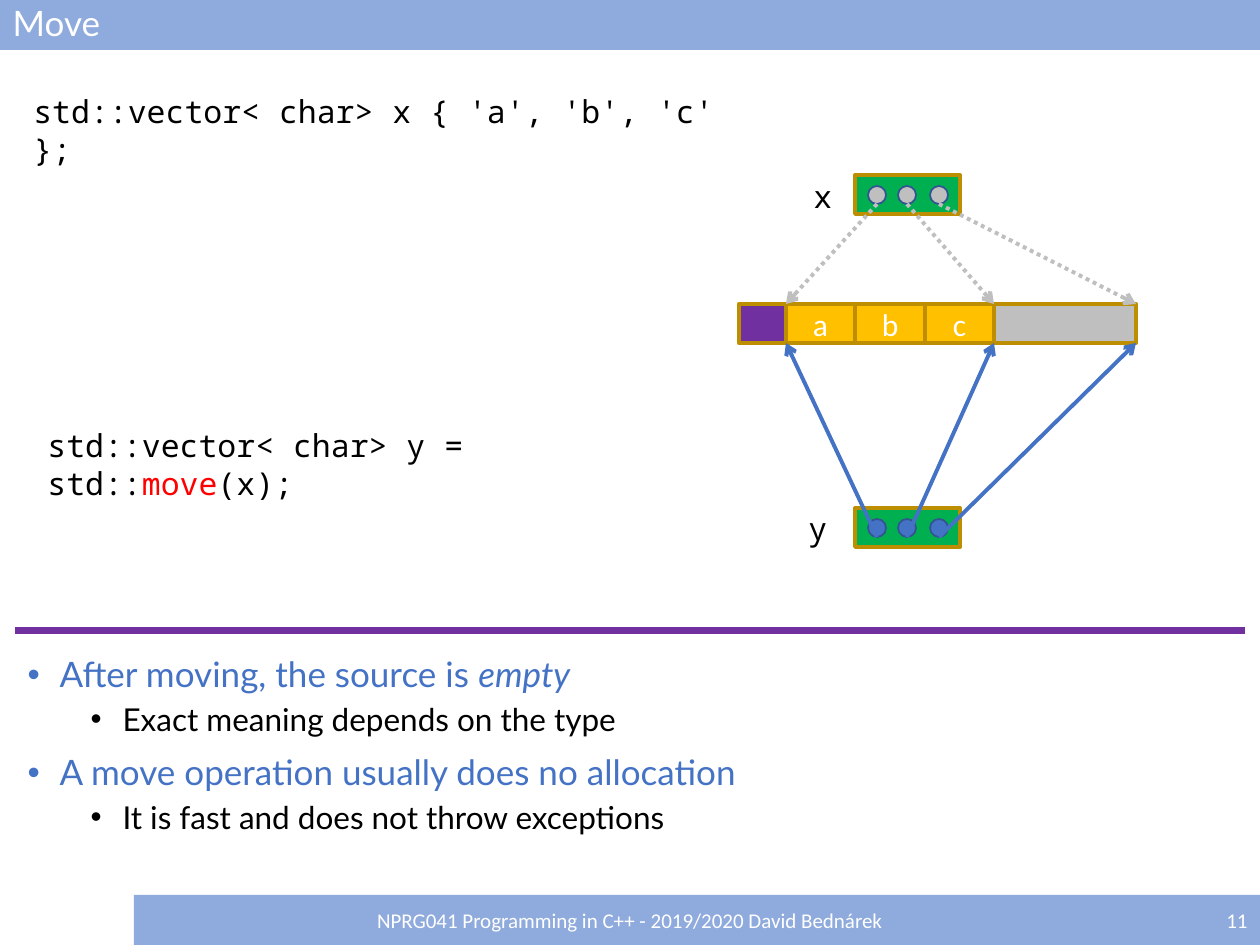
from dataclasses import dataclass
from itertools import accumulate

from lxml import etree
from pptx import Presentation, util as u
from pptx.dml.color import RGBColor
from pptx.enum import dml, shapes, text
from pptx.oxml.ns import qn


@dataclass(frozen=True)
class Theme:
    bar: str = "8FAADC"
    blue: str = "4472C4"
    rim: str = "325491"
    gold: str = "BD8E00"
    amber: str = "FFC000"
    green: str = "00B050"
    gray: str = "BFBFBF"
    violet: str = "7030A0"
    red: str = "FF0000"
    black: str = "000000"
    white: str = "FFFFFF"
    head: str = "Lato"
    sans: str = "Calibri"
    mono: str = "Noto Sans Mono"
    big: int = 20
    mid: int = 18
    small: int = 12
    edge: float = 2.25


T = Theme()
TITLE = "Move"
POINTS = [
    (0, [("After moving, the source is ", False), ("empty", True)]),
    (1, [("Exact meaning depends on the type", False)]),
    (0, [("A move operation usually does no allocation", False)]),
    (1, [("It is fast and does not throw exceptions", False)]),
]
LEVELS = [(T.big, T.blue, 32, 10), (T.mid, T.black, 95, 5)]
CODE = [
    ((21, 86, 706, 50), [("std::vector< char> x { 'a', 'b', 'c' };", T.black)]),
    ((35, 420, 654, 50), [("std::vector< char> y = std::", T.black),
                          ("move", T.red), ("(x);", T.black)]),
    ((801, 171, 43, 50), [("x", T.black)]),
    ((796, 503, 43, 50), [("y", T.black)]),
]
FOOT = [
    ((1126, 895, 134, 50), "11", text.PP_ALIGN.RIGHT),
    ((134, 895, 992, 50), "NPRG041 Programming in C++ - 2019/2020 David Bednárek",
     text.PP_ALIGN.CENTER),
]
CELLS = [("", 47, T.violet), ("a", 69, T.amber), ("b", 70, T.amber),
         ("c", 69, T.amber), ("", 142, T.gray)]
LEFT, TOP, TALL = 739, 304, 39
OWNERS = [(175, T.gray, TOP, True), (508, T.blue, TOP + TALL, False)]
DOTS, SIZE = (868, 898, 930), 18


def px(n):
    return u.Emu(round(n * 914400 / 126))


def rgb(code):
    return RGBColor.from_string(code)


def place(item, box):
    item.left, item.top, item.width, item.height = map(px, box)


def style(font, name, size, color):
    font.name, font.size = name, u.Pt(size)
    font.color.rgb = rgb(color)


def shape(kind, box, fill, rim=None, width=T.edge):
    item = slide.shapes.add_shape(kind, *map(px, box))
    item.shadow.inherit = False
    item.fill.solid()
    item.fill.fore_color.rgb = rgb(fill)
    if rim:
        item.line.color.rgb = rgb(rim)
        item.line.width = u.Pt(width)
    else:
        item.line.fill.background()
    return item


def rect(box, fill, rim=None):
    return shape(shapes.MSO_SHAPE.RECTANGLE, box, fill, rim)


def label(item, words, size, align):
    item.text_frame.vertical_anchor = text.MSO_ANCHOR.MIDDLE
    para = item.text_frame.paragraphs[0]
    para.text, para.alignment = words, align
    style(para.font, T.sans, size, T.white)


def line(start, end, color, width=T.edge, dots=False, arrow=True):
    item = slide.shapes.add_connector(
        shapes.MSO_CONNECTOR.STRAIGHT, *map(px, start + end))
    item.line.color.rgb = rgb(color)
    item.line.width = u.Pt(width)
    if dots:
        item.line.dash_style = dml.MSO_LINE.ROUND_DOT
    if arrow:
        etree.SubElement(item.line._get_or_add_ln(), qn("a:tailEnd"), type="arrow")
    etree.SubElement(item._element.spPr, qn("a:effectLst"))


def title():
    item = slide.shapes.title
    place(item, (0, 0, 1260, 50))
    item.fill.solid()
    item.fill.fore_color.rgb = rgb(T.bar)
    frame = item.text_frame
    frame.vertical_anchor = text.MSO_ANCHOR.MIDDLE
    frame.auto_size = text.MSO_AUTO_SIZE.NONE
    para = frame.paragraphs[0]
    para.text, para.alignment = TITLE, text.PP_ALIGN.LEFT
    para.line_spacing = 0.9
    style(para.font, T.head, T.big, T.white)


def body():
    item = slide.placeholders[1]
    place(item, (15, 651, 1230, 238))
    frame = item.text_frame
    frame.auto_size = text.MSO_AUTO_SIZE.NONE
    for n, (level, runs) in enumerate(POINTS):
        para = frame.add_paragraph() if n else frame.paragraphs[0]
        size, color, indent, gap = LEVELS[level]
        para.level, para.line_spacing = level, 0.9
        para.space_before = u.Pt(gap)
        props = para._p.get_or_add_pPr()
        props.set("marL", str(px(indent)))
        props.set("indent", str(px(-32)))
        etree.SubElement(props, qn("a:buFont"), typeface="Arial")
        etree.SubElement(props, qn("a:buChar"), char="•")
        style(para.font, T.head, size, color)
        for words, slant in runs:
            run = para.add_run()
            run.text = words
            if slant:
                run.font.italic = True


def code(box, runs):
    frame = slide.shapes.add_textbox(*map(px, box)).text_frame
    frame.word_wrap = True
    para = frame.paragraphs[0]
    para.font.name, para.font.size = T.mono, u.Pt(T.mid)
    for words, color in runs:
        run = para.add_run()
        run.text = words
        run.font.color.rgb = rgb(color)


def memory():
    edges = list(accumulate((w for _, w, _ in CELLS), initial=LEFT))
    for left, (words, width, fill) in zip(edges, CELLS):
        item = rect((left, TOP, width, TALL), fill, T.gold)
        if words:
            label(item, words, T.mid, text.PP_ALIGN.CENTER)
    ends = edges[1], edges[4], edges[5]
    for top, color, goal, dots in OWNERS:
        rect((855, top, 105, TALL), T.green, T.gold)
        for left in DOTS:
            shape(shapes.MSO_SHAPE.OVAL, (left, top + 11, SIZE, SIZE),
                  color, T.rim, 1)
        for left, end in zip(DOTS, ends):
            line((left + SIZE // 2, top + 11 + SIZE), (end, goal), color, dots=dots)


deck = Presentation()
deck.slide_width, deck.slide_height = px(1260), px(945)
slide = deck.slides.add_slide(deck.slide_layouts[1])
title()
body()
line((15, 631), (1245, 631), T.violet, 4, arrow=False)
for box, words, align in FOOT:
    label(rect(box, T.bar), words, T.small, align)
memory()
for box, runs in CODE:
    code(box, runs)
deck.save("out.pptx")
